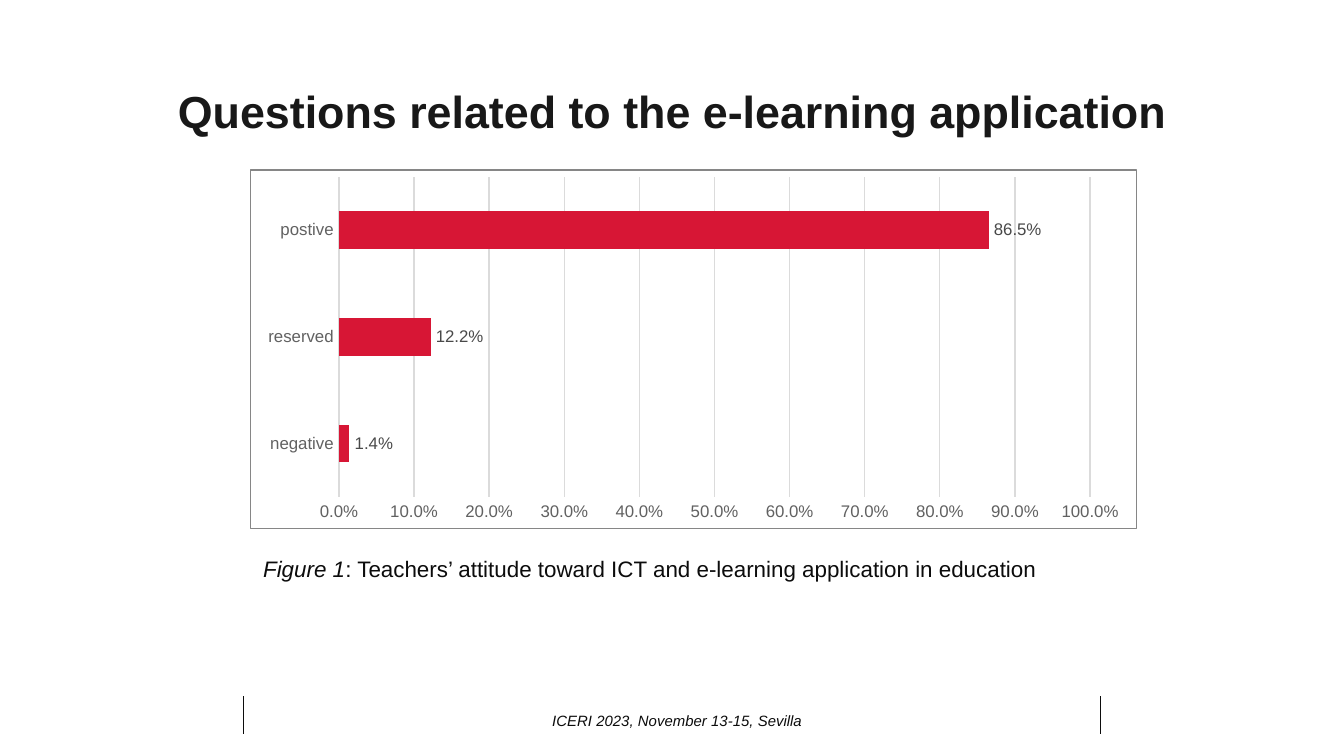
from dataclasses import dataclass

from lxml.etree import SubElement
from pptx import Presentation
from pptx.chart.data import CategoryChartData
from pptx.dml.color import RGBColor
from pptx.enum.chart import XL_CHART_TYPE as ChartType
from pptx.enum.chart import XL_LABEL_POSITION as LabelPosition
from pptx.enum.chart import XL_TICK_MARK as TickMark
from pptx.enum.shapes import MSO_CONNECTOR as Connector
from pptx.enum.text import MSO_ANCHOR as Anchor
from pptx.enum.text import MSO_AUTO_SIZE as AutoSize
from pptx.enum.text import PP_ALIGN as Align
from pptx.oxml import parse_xml
from pptx.oxml.ns import nsdecls, qn
from pptx.util import Inches, Pt

FONT = "Arial"
INK = "0C0C0C"
GRID = "DBDBDB"
AXIS_TEXT = "616161"
PERCENT = "0.0%"


@dataclass
class Box:
    left: float
    top: float
    width: float
    height: float

    def lengths(self):
        return [Inches(n) for n in (self.left, self.top, self.width, self.height)]


def color(value: str) -> RGBColor:
    return RGBColor.from_string(value)


def style_font(font, size: float, ink: str = INK, bold: bool = False, italic: bool = False) -> None:
    font.name = FONT
    font.size = Pt(size)
    font.color.rgb = color(ink)
    font.bold = bold
    font.italic = italic


def style_line(line, ink: str, width: float) -> None:
    line.color.rgb = color(ink)
    line.width = Pt(width)


def add_footer_rule(slide, x: float) -> None:
    rule = slide.shapes.add_connector(
        Connector.STRAIGHT, Inches(x), Inches(5.18), Inches(x), Inches(5.46))
    style_line(rule.line, INK, 0.5)
    SubElement(rule._element.spPr, qn("a:effectLst"))


def add_attitude_chart(slide, box: Box) -> None:
    data = CategoryChartData(number_format=PERCENT)
    data.categories = ["negative", "reserved", "postive"]
    data.add_series("Series 1", (0.014, 0.122, 0.865))
    chart = slide.shapes.add_chart(ChartType.BAR_CLUSTERED, *box.lengths(), data).chart
    chart.has_legend = False
    chart.has_title = False
    style_font(chart.font, 10)

    # Axes
    answers, share = chart.category_axis, chart.value_axis
    for axis in (answers, share):
        axis.major_tick_mark = axis.minor_tick_mark = TickMark.NONE
        style_font(axis.tick_labels.font, 9, AXIS_TEXT)
    style_line(answers.format.line, GRID, 0.75)
    share.format.line.fill.background()
    share.minimum_scale, share.maximum_scale, share.major_unit = 0, 1, 0.1
    share.has_major_gridlines = True
    style_line(share.major_gridlines.format.line, GRID, 0.75)
    share.tick_labels.number_format = PERCENT
    share.tick_labels.number_format_is_linked = False

    # Bars and their values
    plot = chart.plots[0]
    plot.gap_width = 182
    plot.vary_by_categories = False
    bars = plot.series[0]
    bars.format.fill.solid()
    bars.format.fill.fore_color.rgb = color("D71635")
    labels = bars.data_labels
    labels.show_value = True
    labels.position = LabelPosition.OUTSIDE_END
    labels.number_format = PERCENT
    labels.number_format_is_linked = False
    style_font(labels.font, 9, "494949")

    # Frame around the chart
    frame = parse_xml(
        f'<c:spPr {nsdecls("c", "a")}><a:noFill/><a:ln w="{Pt(0.75)}"><a:solidFill>'
        '<a:srgbClr val="868686"/></a:solidFill></a:ln></c:spPr>')
    chart._chartSpace.find(qn("c:chart")).addnext(frame)


def main() -> None:
    # Widescreen slide, 16:9
    deck = Presentation()
    deck.slide_width = Inches(10)
    deck.slide_height = deck.slide_width * 9 // 16
    slide = deck.slides.add_slide(deck.slide_layouts[5])

    # Footer rules
    for x in (1.81, 8.19):
        add_footer_rule(slide, x)

    # Title
    title = slide.shapes.title
    title.left, title.top, title.width, title.height = Box(0.69, 0.3, 8.62, 1.09).lengths()
    title.text_frame.text = "Questions related to the e-learning application"
    title.text_frame.vertical_anchor = Anchor.MIDDLE
    heading = title.text_frame.paragraphs[0]
    heading.alignment = Align.CENTER
    heading.line_spacing = 0.9
    style_font(heading.runs[0].font, 24, "181818", bold=True)

    # Conference footer
    footer = slide.shapes.add_textbox(*Box(2.24, 5.21, 5.6, 0.3).lengths()).text_frame
    footer.word_wrap = True
    footer.vertical_anchor = Anchor.MIDDLE
    footer.text = "ICERI 2023, November 13-15, Sevilla"
    footer.paragraphs[0].alignment = Align.CENTER
    style_font(footer.paragraphs[0].runs[0].font, 8, italic=True)

    add_attitude_chart(slide, Box(1.86, 1.26, 6.6, 2.68))

    # Figure caption
    caption = slide.shapes.add_textbox(*Box(1.86, 4.08, 6, 0.3).lengths()).text_frame
    caption.word_wrap = False
    caption.auto_size = AutoSize.SHAPE_TO_FIT_TEXT
    for words, italic in (
        ("Figure 1", True),
        (": Teachers’ attitude toward ICT and e-learning application in education", False),
    ):
        run = caption.paragraphs[0].add_run()
        run.text = words
        style_font(run.font, 12, italic=italic)

    deck.save("out.pptx")


if __name__ == "__main__":
    main()
